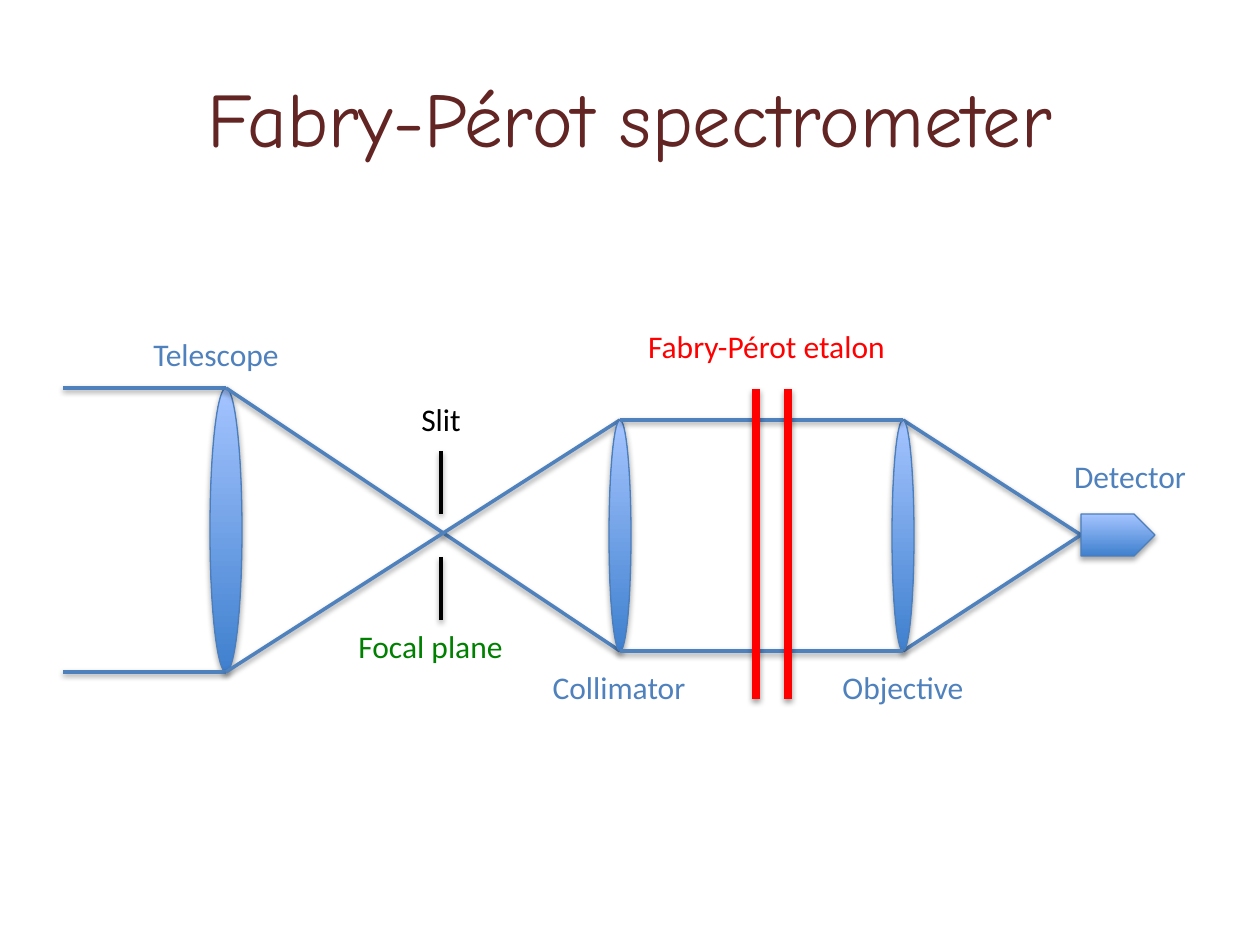
from lxml import etree
from pptx import Presentation
from pptx.dml.color import RGBColor
from pptx.enum.shapes import MSO_CONNECTOR, MSO_SHAPE
from pptx.enum.text import MSO_ANCHOR, MSO_AUTO_SIZE, PP_ALIGN
from pptx.util import Emu, Pt

STRAIGHT = MSO_CONNECTOR.STRAIGHT
OVAL, PENTAGON = MSO_SHAPE.OVAL, MSO_SHAPE.PENTAGON
LEFT, CENTER = PP_ALIGN.LEFT, PP_ALIGN.CENTER
MIDDLE, TOP = MSO_ANCHOR.MIDDLE, MSO_ANCHOR.TOP
FIT_TEXT, FIXED = MSO_AUTO_SIZE.SHAPE_TO_FIT_TEXT, MSO_AUTO_SIZE.NONE

PX_PER_INCH = 126
DRAWING_NS = "http://schemas.openxmlformats.org/drawingml/2006/main"
BLUE, RED, GREEN, BLACK, MAROON = "4F81BD", "FF0000", "008000", "000000", "632523"
OUTLINE, GRADIENT = "4B7EBC", ("3F80CE", "A4C4FF")


def px(length):
    return Emu(round(length * 914400 / PX_PER_INCH))


def color(hex_string):
    return RGBColor.from_string(hex_string)


def add_shadow(shape, distance, opacity):
    """Add a soft downward shadow; call it after fill and line are set."""
    shape._element.spPr.append(etree.fromstring(
        f'<a:effectLst xmlns:a="{DRAWING_NS}">'
        f'<a:outerShdw blurRad="40000" dist="{distance}" dir="5400000" rotWithShape="0">'
        f'<a:srgbClr val="000000"><a:alpha val="{opacity}000"/></a:srgbClr>'
        '</a:outerShdw></a:effectLst>'))


class OpticsSlide:
    """Holds the current slide and the style of the optical diagram."""

    def __init__(self, slide):
        self.shapes = slide.shapes

    def text(self, words, left, top, width, height, hex_color, align=CENTER,
             font="Calibri", size=18, anchor=TOP, auto_size=FIT_TEXT):
        box = self.shapes.add_textbox(px(left), px(top), px(width), px(height))
        frame = box.text_frame
        frame.word_wrap = True
        frame.auto_size = auto_size
        frame.vertical_anchor = anchor
        para = frame.paragraphs[0]
        para.alignment = align
        span = para.add_run()
        span.text = words
        span.font.name = font
        span.font.size = Pt(size)
        span.font.color.rgb = color(hex_color)

    def optic(self, preset, left, top, width, height):
        """Draw a lens or detector with a vertical blue gradient."""
        shape = self.shapes.add_shape(preset, px(left), px(top), px(width), px(height))
        shape.fill.gradient()
        shape.fill.gradient_angle = 90
        for stop, hex_color, position in zip(shape.fill.gradient_stops, GRADIENT, (0, 1)):
            stop.color.rgb = color(hex_color)
            stop.position = position
        shape.line.color.rgb = color(OUTLINE)
        shape.line.width = Pt(0.75)
        add_shadow(shape, 23000, 35)

    def lens(self, center, top, bottom, width):
        self.optic(OVAL, center - width / 2, top, width, bottom - top)

    def line(self, start, end, hex_color=BLUE, width=2):
        line = self.shapes.add_connector(STRAIGHT, *map(px, start + end))
        line.line.color.rgb = color(hex_color)
        line.line.width = Pt(width)
        add_shadow(line, 20000, 38)


def main():
    deck = Presentation()
    deck.slide_width, deck.slide_height = px(1260), px(945)
    page = OpticsSlide(deck.slides.add_slide(deck.slide_layouts[6]))

    page.text("Fabry-Pérot spectrometer", 63, 38, 1134, 157, MAROON,
              font="Comic Neue", size=44, anchor=MIDDLE, auto_size=FIXED)

    telescope, collimator, objective = 226, 620, 903
    wide_top, wide_bottom = 388, 672
    beam_top, beam_bottom = 420, 651
    focus = (1081, 535)

    page.lens(telescope, wide_top, wide_bottom, 32)
    for y, crossed_y in ((wide_top, beam_bottom), (wide_bottom, beam_top)):
        page.line((63, y), (telescope, y))
        page.line((telescope, y), (collimator, crossed_y))
    page.lens(collimator, beam_top, beam_bottom, 22)
    for y in (beam_top, beam_bottom):
        page.line((objective, y), focus)
    page.optic(PENTAGON, 1081, 514, 74, 42)
    page.lens(objective, beam_top, beam_bottom, 22)
    for y in (beam_top, beam_bottom):
        page.line((collimator, y), (objective, y))

    for x in (756, 788):
        page.line((x, 389), (x, 699), RED, 4.5)
    for y in (451, 557):
        page.line((441, y), (441, y + 63), BLACK)

    for words, left, top, width, hex_color, align in (
        ("Telescope", 141, 329, 163, BLUE, LEFT),
        ("Focal plane", 346, 621, 189, GREEN, LEFT),
        ("Objective", 819, 662, 168, BLUE, CENTER),
        ("Detector ", 1018, 451, 231, BLUE, CENTER),
        ("Collimator", 535, 662, 168, BLUE, CENTER),
        ("Fabry-Pérot etalon", 609, 321, 315, RED, CENTER),
        ("Slit", 399, 394, 84, BLACK, CENTER),
    ):
        page.text(words, left, top, width, 50, hex_color, align)

    deck.save("out.pptx")


if __name__ == "__main__":
    main()
